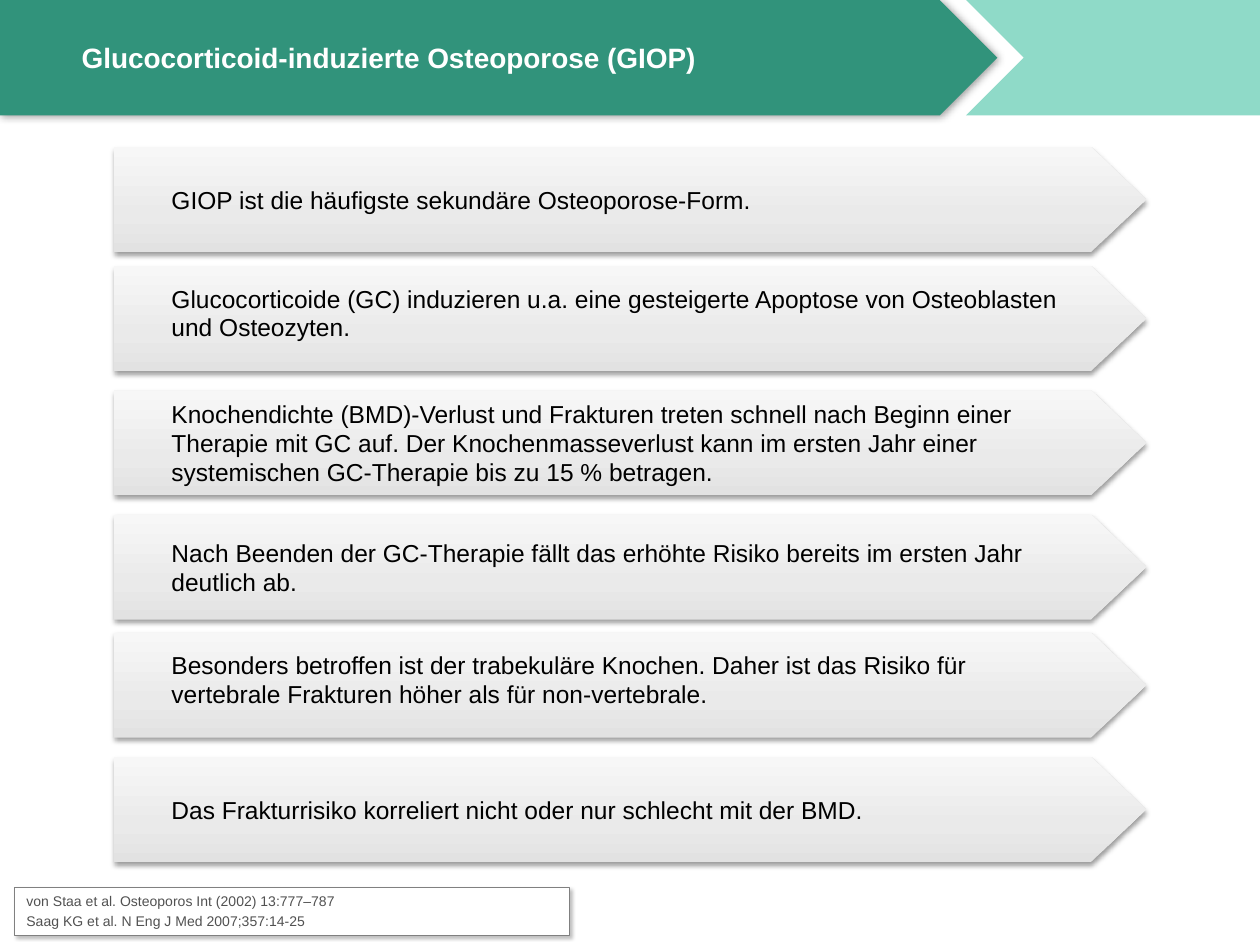
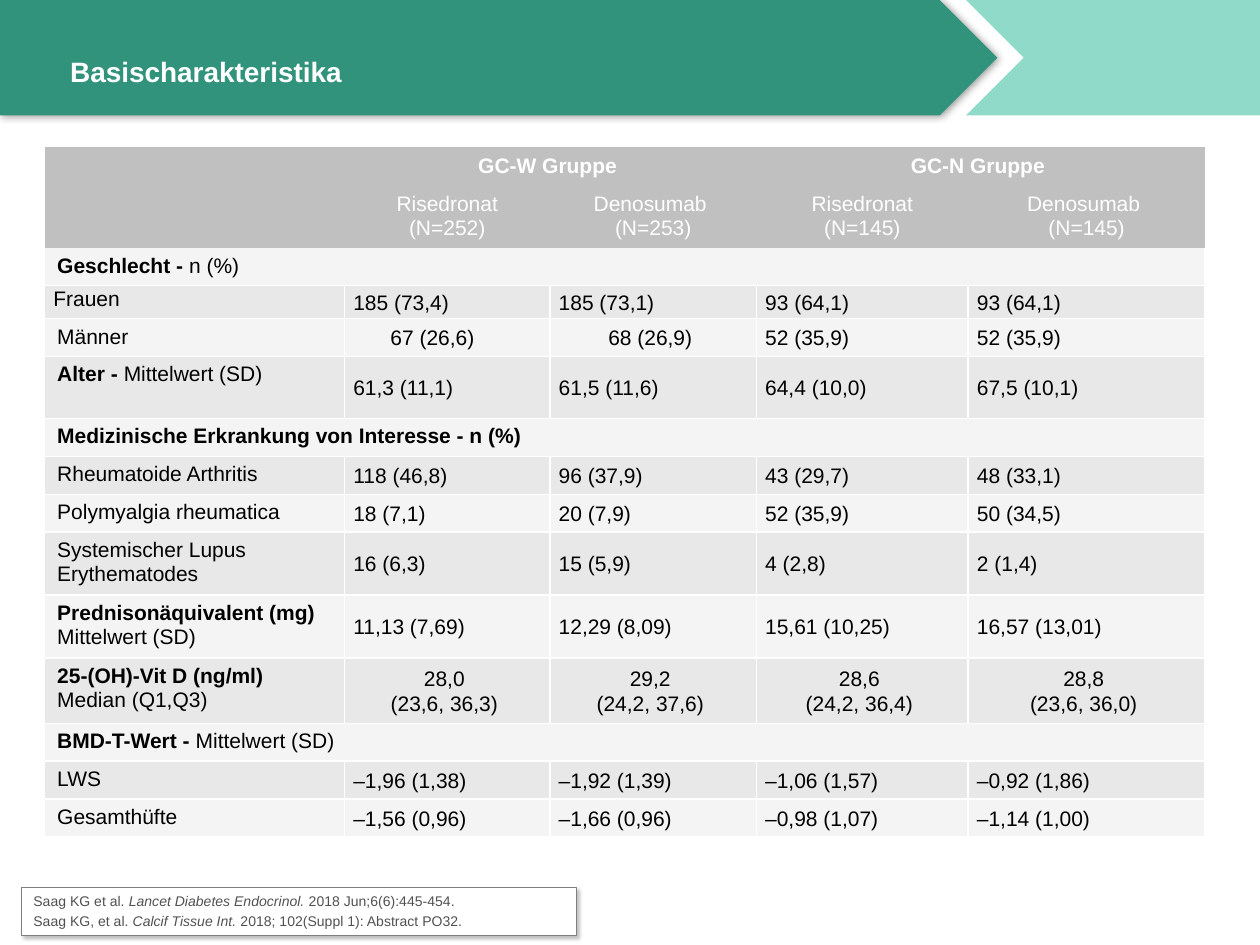
from pptx import Presentation
from pptx.dml.color import RGBColor
from pptx.enum import shapes, text
from pptx.oxml import parse_xml
from pptx.util import Pt

NS = 'xmlns:a="http://schemas.openxmlformats.org/drawingml/2006/main"'
FONT = "Arial"
GREEN, MINT, WHITE, BLACK = "31937B", "8FDAC8", "FFFFFF", "000000"
HEADER, LIGHT, DARK = "C0C0C0", "F4F4F4", "E8E8E8"
BORDER, SOURCE_TEXT = "808080", "515151"
ARROW_STOPS = [(0, "E2E2E2"), (35, "EAEAEA"), (100, "F7F7F7")]
INSETS = (7.2, 3.6, 7.2, 3.6)
MIDDLE, TOP, BOTTOM = (text.MSO_ANCHOR.MIDDLE, text.MSO_ANCHOR.TOP,
                       text.MSO_ANCHOR.BOTTOM)
LEFT, CENTER = text.PP_ALIGN.LEFT, text.PP_ALIGN.CENTER


def rgb(value):
    return RGBColor.from_string(value)


class Deck:
    """Holds the style and the current slide."""

    def __init__(self):
        self.prs = Presentation()
        self.prs.slide_width, self.prs.slide_height = Pt(720), Pt(540)
        self.s = None

    def new_slide(self, title, box):
        """Add a slide with both header bands and its title."""
        self.s = self.prs.slides.add_slide(self.prs.slide_layouts[6])
        self.outline([(552, 0), (720, 0), (720, 66), (552, 66), (585, 33)], MINT)
        band = self.s.shapes.add_shape(shapes.MSO_SHAPE.PENTAGON,
                                       0, 0, Pt(570), Pt(66))
        self.paint(band, GREEN)
        self.shadow(band, 40, 5, 0, 0)
        self.textbox(box, [[(title, "b")]], 16, WHITE)

    def paint(self, sp, fill=None):
        """Fill without line or shadow; a gradient if no colour is given."""
        sp.shadow.inherit = False
        if fill:
            sp.fill.solid()
            sp.fill.fore_color.rgb = rgb(fill)
        else:
            stops = "".join(f'<a:gs pos="{pos * 1000}"><a:srgbClr val="{c}"/></a:gs>'
                            for pos, c in ARROW_STOPS)
            sp.element.spPr.insert(2, parse_xml(
                f'<a:gradFill {NS} rotWithShape="1"><a:gsLst>{stops}</a:gsLst>'
                '<a:lin ang="16200000" scaled="0"/></a:gradFill>'))
        sp.line.fill.background()

    def shadow(self, sp, alpha, blur, dist, angle):
        effects = sp.element.spPr.find("{*}effectLst")
        effects.append(parse_xml(
            f'<a:outerShdw {NS} blurRad="{Pt(blur)}" dist="{Pt(dist)}" '
            f'dir="{angle * 60000}" algn="ctr" rotWithShape="0">'
            f'<a:srgbClr val="{BLACK}"><a:alpha val="{alpha * 1000}"/></a:srgbClr>'
            '</a:outerShdw>'))

    def outline(self, points, fill=None):
        points = [(Pt(x), Pt(y)) for x, y in points]
        builder = self.s.shapes.build_freeform(*points[0])
        builder.add_line_segments(points[1:], close=True)
        sp = builder.convert_to_shape()
        self.paint(sp, fill)
        return sp

    def add_text(self, tf, paragraphs, size, color, align=LEFT, spacing=1.0,
                 before=0):
        """Each paragraph is a string or a list of (words, style) runs."""
        for i, content in enumerate(paragraphs):
            p = tf.add_paragraph() if i else tf.paragraphs[0]
            p.alignment, p.line_spacing = align, spacing
            p.space_before = Pt(before)
            p.font.name, p.font.size = FONT, Pt(size)
            p.font.color.rgb = rgb(color)
            runs = [(content, "")] if isinstance(content, str) else content
            for words, style in runs:
                r = p.add_run()
                r.text = words
                if style == "b":
                    r.font.bold = True
                elif style == "i":
                    r.font.italic = True

    def frame(self, holder, insets, anchor):
        """Set insets and anchor of a text frame or a table cell."""
        (holder.margin_left, holder.margin_top,
         holder.margin_right, holder.margin_bottom) = map(Pt, insets)
        holder.vertical_anchor = anchor

    def textbox(self, box, paragraphs, size, color, insets=INSETS,
                anchor=MIDDLE, spacing=1.0):
        tf = self.s.shapes.add_textbox(*map(Pt, box)).text_frame
        tf.word_wrap = True
        self.frame(tf, insets, anchor)
        self.add_text(tf, paragraphs, size, color, spacing=spacing)

    def arrow(self, top, words, bottom=False, spacing=1.0):
        """Statement arrow; bottom leaves one free line below the words."""
        sp = self.outline([(65, top), (623.5, top), (655, top + 30),
                           (623.5, top + 60), (65, top + 60)])
        self.shadow(sp, 38, 3.1, 1.6, 90)
        self.textbox((95, top, 521, 60), [words], 14, BLACK,
                     insets=(3, 0.7, 0.7, 16.5 if bottom else 0.7),
                     anchor=BOTTOM if bottom else MIDDLE, spacing=spacing)

    def sources(self, left, paragraphs):
        sp = self.s.shapes.add_shape(shapes.MSO_SHAPE.RECTANGLE,
                                     Pt(left), Pt(507), Pt(317.5), Pt(27.5))
        self.paint(sp, WHITE)
        sp.line.color.rgb, sp.line.width = rgb(BORDER), Pt(0.25)
        self.shadow(sp, 25, 2, 2, 45)
        sp.text_frame.word_wrap = True
        self.frame(sp.text_frame, INSETS, BOTTOM)
        self.add_text(sp.text_frame, paragraphs, 8, SOURCE_TEXT,
                      spacing=0.9, before=2.4)

    def table(self, left, top, widths, heights):
        tbl = self.s.shapes.add_table(
            len(heights), len(widths), Pt(left), Pt(top),
            Pt(sum(widths)), Pt(sum(heights))).table
        tbl.first_row = tbl.horz_banding = False
        for col, width in zip(tbl.columns, widths):
            col.width = Pt(width)
        for row, height in zip(tbl.rows, heights):
            row.height = Pt(height)
        return tbl

    def cell(self, cell, paragraphs, fill, color=BLACK, align=LEFT, spacing=1.0,
             insets=INSETS, anchor=TOP, sides="LRTB"):
        """Fill a cell and draw white borders on the named sides."""
        self.frame(cell, insets, anchor)
        cell.fill.solid()
        cell.fill.fore_color.rgb = rgb(fill)
        for i, side in enumerate("LRTB"):
            line = (f'<a:solidFill><a:srgbClr val="{WHITE}"/></a:solidFill>'
                    if side in sides else "<a:noFill/>")
            cell._tc.tcPr.insert(i, parse_xml(
                f'<a:ln{side} {NS} w="{Pt(1)}">{line}</a:ln{side}>'))
        self.add_text(cell.text_frame, paragraphs, 12, color, align, spacing)


ARROWS = [
    (84, "GIOP ist die häufigste sekundäre Osteoporose-Form.", {}),
    (152, "Glucocorticoide (GC) induzieren u.a. eine gesteigerte Apoptose von "
          "Osteoblasten und Osteozyten.", {"bottom": True, "spacing": 0.95}),
    (223, "Knochendichte (BMD)-Verlust und Frakturen treten schnell nach Beginn "
          "einer Therapie mit GC auf. Der Knochenmasseverlust kann im ersten Jahr "
          "einer systemischen GC-Therapie bis zu 15 % betragen.", {}),
    (294, "Nach Beenden der GC-Therapie fällt das erhöhte Risiko bereits im ersten "
          "Jahr deutlich ab.", {}),
    (361.5, "Besonders betroffen ist der trabekuläre Knochen. Daher ist das Risiko "
            "für vertebrale Frakturen höher als für non-vertebrale.",
     {"bottom": True}),
    (432.5, "Das Frakturrisiko korreliert nicht oder nur schlecht mit der BMD.", {}),
]

GROUPS = ["GC-W Gruppe ", "GC-N Gruppe "]
ARMS = [("Risedronat", "(N=252)"), ("Denosumab ", "(N=253)"),
        ("Risedronat", "(N=145)"), ("Denosumab ", "(N=145)")]

# Row height, bold label, plain label, values (none: heading across the table)
ROWS = [
    (21.5, "Geschlecht - ", "n (%)", []),
    (18.8, "", "Frauen", ["185 (73,4)", "185 (73,1)", "93 (64,1)", "93 (64,1)"]),
    (21.3, "", "Männer", ["67 (26,6)", "68 (26,9) ", "52 (35,9)", "52 (35,9)"]),
    (35.5, "Alter - ", "Mittelwert (SD)",
     ["61,3 (11,1)", "61,5 (11,6)", "64,4 (10,0)", "67,5 (10,1)"]),
    (21.5, "Medizinische Erkrankung von Interesse - n (%)", "", []),
    (21.3, "", "Rheumatoide Arthritis",
     ["118 (46,8)", "96 (37,9)", "43 (29,7)", "48 (33,1)"]),
    (21.3, "", "Polymyalgia rheumatica",
     ["18 (7,1)", "20 (7,9)", "52 (35,9)", "50 (34,5)"]),
    (35.5, "", "Systemischer Lupus Erythematodes",
     ["16 (6,3)", "15 (5,9)", "4 (2,8)", "2 (1,4)"]),
    (35.5, "Prednisonäquivalent (mg) ", "Mittelwert (SD)",
     ["11,13 (7,69)", "12,29 (8,09)", "15,61 (10,25)", "16,57 (13,01)"]),
    (37.2, "25-(OH)-Vit D (ng/ml) ", "Median (Q1,Q3)",
     ["28,0 \n(23,6, 36,3) ", "29,2 \n(24,2, 37,6) ",
      "28,6 \n(24,2, 36,4) ", "28,8 \n(23,6, 36,0) "]),
    (21.3, "BMD-T-Wert - ", "Mittelwert (SD)", []),
    (21.3, "", "LWS",
     ["‒1,96 (1,38)", "‒1,92 (1,39)", "‒1,06 (1,57)", "‒0,92 (1,86)"]),
    (21.3, "", "Gesamthüfte",
     ["‒1,56 (0,96)", "‒1,66 (0,96)", "‒0,98 (1,07)", "‒1,14 (1,00)"]),
]


def build_giop(deck):
    deck.new_slide("Glucocorticoid-induzierte Osteoporose (GIOP)",
                   (39.6, 8.6, 482, 48))
    for top, words, options in ARROWS:
        deck.arrow(top, words, **options)
    deck.sources(8, ["von Staa et al. Osteoporos Int (2002) 13:777–787",
                     "Saag KG et al. N Eng J Med 2007;357:14-25"])


def build_baseline(deck):
    deck.new_slide("Basischarakteristika", (33, 4.3, 672, 73))
    tbl = deck.table(25.5, 84, [171.4, 117.4, 118, 121, 135.4],
                     [21, 35.5] + [row[0] for row in ROWS])

    # Header
    header = dict(fill=HEADER, color=WHITE, align=CENTER, anchor=MIDDLE, sides="")
    tbl.cell(0, 0).merge(tbl.cell(1, 0))
    for r in range(2):
        deck.cell(tbl.cell(r, 0), [[]], **header)
    for i, group in enumerate(GROUPS):
        first, second = tbl.cell(0, 2 * i + 1), tbl.cell(0, 2 * i + 2)
        first.merge(second)
        deck.cell(first, [[(group, "b")]], **header)
        deck.cell(second, [[]], **header)
    for c, arm in enumerate(ARMS, 1):
        deck.cell(tbl.cell(1, c), arm, **header)

    # Body, in alternating shades
    tight = (5, 0, 5, 0)
    for r, (_, bold, plain, values) in enumerate(ROWS, 2):
        fill = DARK if r % 2 else LIGHT
        sides = "LRB" if r == 2 else "LRTB"
        label = [run for run in ((bold, "b"), (plain, "")) if run[0]]
        compact = dict(insets=tight, spacing=1.07) if plain == "Frauen" else {}
        deck.cell(tbl.cell(r, 0), [label], fill, sides=sides, **compact)
        if not values:
            tbl.cell(r, 0).merge(tbl.cell(r, 4))
            for c in range(1, 5):
                deck.cell(tbl.cell(r, c), [[]], fill, sides=sides)
        for c, value in enumerate(values, 1):
            centred = "\n" in value or (plain == "Männer" and c < 3)
            # The first count of men sits left of the centre
            insets = (5, 0, 22, 0) if plain == "Männer" and c == 1 else tight
            deck.cell(tbl.cell(r, c), value.split("\n"), fill, spacing=1.07,
                      align=CENTER if centred else LEFT, insets=insets,
                      anchor=MIDDLE, sides=sides)

    deck.sources(12, [
        [("Saag KG et al. ", ""), ("Lancet Diabetes Endocrinol.", "i"),
         (" 2018 Jun;6(6):445-454.", "")],
        [("Saag KG, et al. ", ""), ("Calcif Tissue Int.", "i"),
         (" 2018; 102(Suppl 1): Abstract PO32.", "")]])


def main():
    deck = Deck()
    build_giop(deck)
    build_baseline(deck)
    deck.prs.save("out.pptx")


if __name__ == "__main__":
    main()
